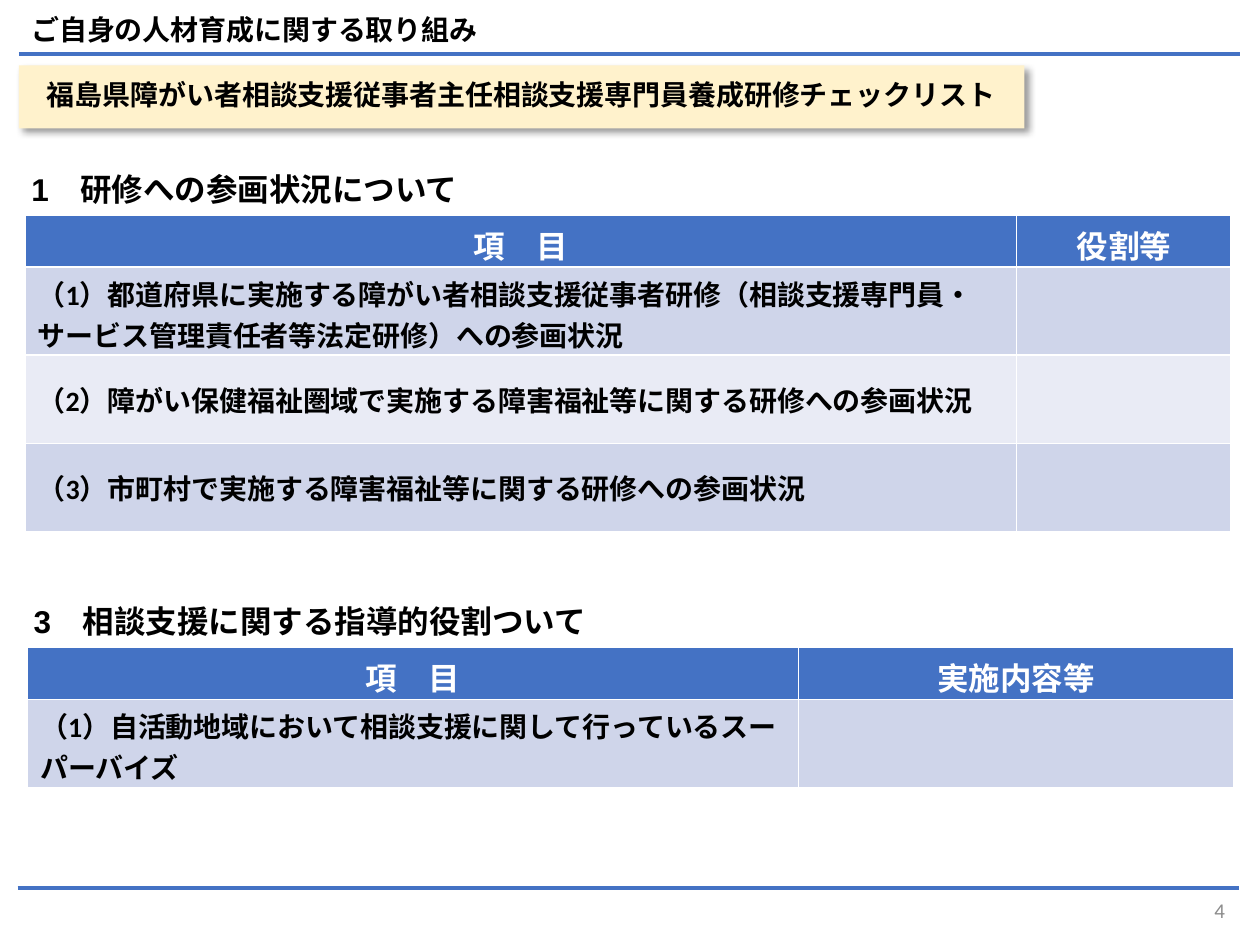
from lxml import etree
from pptx import Presentation
from pptx.dml.color import RGBColor
from pptx.enum.shapes import MSO_CONNECTOR
from pptx.enum.text import MSO_ANCHOR, MSO_AUTO_SIZE, PP_ALIGN
from pptx.oxml import parse_xml
from pptx.oxml.ns import nsdecls, qn
from pptx.util import Pt

STRAIGHT = MSO_CONNECTOR.STRAIGHT
MIDDLE = MSO_ANCHOR.MIDDLE
NO_AUTOFIT = MSO_AUTO_SIZE.NONE
LEFT, CENTER, RIGHT, JUSTIFY = PP_ALIGN.LEFT, PP_ALIGN.CENTER, PP_ALIGN.RIGHT, PP_ALIGN.JUSTIFY

BLACK = RGBColor(0x00, 0x00, 0x00)
WHITE = RGBColor(0xFF, 0xFF, 0xFF)
GRAY = RGBColor(0x8C, 0x8C, 0x8C)
BLUE = RGBColor(0x44, 0x72, 0xC4)
CREAM = RGBColor(0xFF, 0xF2, 0xCC)
BANDS = [RGBColor(0xCF, 0xD5, 0xEA), RGBColor(0xE9, 0xEB, 0xF5)]


def write_text(frame, text, size, font_name, color, bold, alignment, spacing=None):
    frame.word_wrap = True
    frame.vertical_anchor = MIDDLE
    paragraph = frame.paragraphs[0]
    paragraph.text = text
    paragraph.alignment = alignment
    paragraph.line_spacing = spacing
    font = paragraph.runs[0].font
    for name, value in {"size": Pt(size), "name": font_name, "bold": bold}.items():
        setattr(font, name, value)
    font.color.rgb = color


presentation = Presentation()
presentation.slide_width = Pt(720)
presentation.slide_height = Pt(540)
slide = presentation.slides.add_slide(presentation.slide_layouts[5])

for left, top in [(10.8, 31), (10.1, 507.6)]:
    rule = slide.shapes.add_connector(STRAIGHT, Pt(left), Pt(top), Pt(left + 697.7), Pt(top))
    rule.line.color.rgb = BLUE
    rule.line.width = Pt(2.5)
    etree.SubElement(rule._element.spPr, qn("a:effectLst"))

title = slide.shapes.title
position = {"left": Pt(10.8), "top": Pt(37.4), "width": Pt(574.6), "height": Pt(36)}
for name, value in position.items():
    setattr(title, name, value)
title.fill.solid()
title.fill.fore_color.rgb = CREAM
title.line.fill.background()
title._element.spPr.append(parse_xml(
    f'<a:effectLst {nsdecls("a")}>'
    f'<a:outerShdw blurRad="{Pt(4)}" dist="{Pt(3)}" dir="2700000" algn="tl" rotWithShape="0">'
    '<a:srgbClr val="000000"><a:alpha val="40000"/></a:srgbClr>'
    '</a:outerShdw></a:effectLst>'))
title.text_frame.auto_size = NO_AUTOFIT
write_text(title.text_frame, "福島県障がい者相談支援従事者主任相談支援専門員養成研修チェックリスト",
           16, "Arial", BLACK, True, CENTER, 0.9)

labels = [
    ("ご自身の人材育成に関する取り組み", 10.8, 5.8, 696.2, 24.5, 16, "Arial", BLACK, True, JUSTIFY, 0.9),
    ("1　研修への参画状況について", 10.8, 97.2, 696.2, 24.5, 18, "Arial", BLACK, True, JUSTIFY, 0.9),
    ("3　相談支援に関する指導的役割ついて", 12.2, 344.2, 696.2, 24.5, 18, "Arial", BLACK, True, JUSTIFY, 0.9),
    ("4", 643.7, 511.2, 63.4, 18, 12, "Calibri", GRAY, False, RIGHT, None),
]
for text, left, top, width, height, *text_format in labels:
    label = slide.shapes.add_textbox(Pt(left), Pt(top), Pt(width), Pt(height))
    write_text(label.text_frame, text, *text_format)

HEADER_HEIGHT, ROW_HEIGHT = 29.5, 50.4
checklists = [
    (14.4, 123.1, [566.6, 122.4], ["項　目", "役割等"], [
        "（1）都道府県に実施する障がい者相談支援従事者研修（相談支援専門員・サービス管理責任者等法定研修）への参画状況",
        "（2）障がい保健福祉圏域で実施する障害福祉等に関する研修への参画状況",
        "（3）市町村で実施する障害福祉等に関する研修への参画状況",
    ]),
    (15.8, 370.1, [440.6, 248.4], ["項　目", "実施内容等"], [
        "（1）自活動地域において相談支援に関して行っているスーパーバイズ",
    ]),
]
for left, top, widths, headings, items in checklists:
    height = HEADER_HEIGHT + ROW_HEIGHT * len(items)
    table = slide.shapes.add_table(len(items) + 1, len(widths), Pt(left), Pt(top),
                                   Pt(sum(widths)), Pt(height)).table
    for column, width in zip(table.columns, widths):
        column.width = Pt(width)
    for row_index, texts in enumerate([headings] + [[item, ""] for item in items]):
        is_header = row_index == 0
        table.rows[row_index].height = Pt(HEADER_HEIGHT if is_header else ROW_HEIGHT)
        for cell, text in zip(table.rows[row_index].cells, texts):
            cell.fill.solid()
            cell.fill.fore_color.rgb = BLUE if is_header else BANDS[(row_index - 1) % 2]
            cell.vertical_anchor = MIDDLE
            if is_header:
                write_text(cell.text_frame, text, 18, "Calibri", WHITE, True, CENTER)
            elif text:
                write_text(cell.text_frame, text, 16, "Calibri", BLACK, True, LEFT)

presentation.save("out.pptx")
